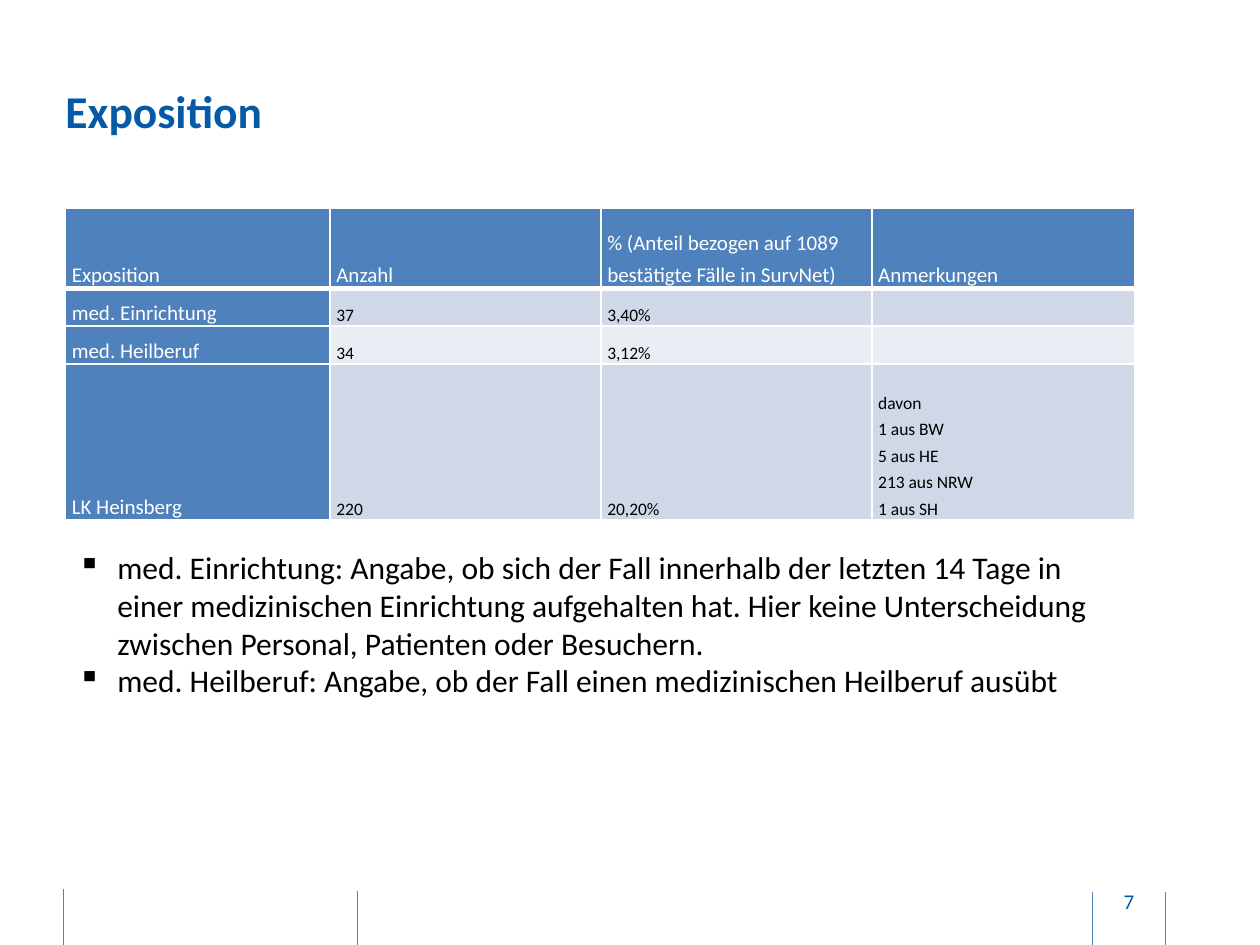
from dataclasses import dataclass

from lxml import etree
from pptx import Presentation
from pptx.dml.color import RGBColor
from pptx.enum.shapes import MSO_CONNECTOR
from pptx.enum.text import MSO_ANCHOR, PP_ALIGN
from pptx.oxml.ns import qn
from pptx.util import Pt

STRAIGHT = MSO_CONNECTOR.STRAIGHT
TOP, MIDDLE, BOTTOM = MSO_ANCHOR.TOP, MSO_ANCHOR.MIDDLE, MSO_ANCHOR.BOTTOM
LEFT, CENTER = PP_ALIGN.LEFT, PP_ALIGN.CENTER

TITLE_BLUE = RGBColor(0x04, 0x5A, 0xA6)
ACCENT_BLUE = RGBColor(0x4F, 0x81, 0xBD)
BAND_DARK = RGBColor(0xD0, 0xD8, 0xE8)
BAND_LIGHT = RGBColor(0xE9, 0xED, 0xF4)
WHITE = RGBColor(0xFF, 0xFF, 0xFF)
BLACK = RGBColor(0, 0, 0)

FONT = "Calibri"
MARGIN_LEFT = 37.44
CONTENT_WIDTH = 611.28
COLUMN_WIDTHS = (151.2, 154.8, 154.8, 150.48)
ROW_HEIGHTS = (45.9, 21.5, 21.5, 89.2)
TABLE_ROWS = (
    ("Exposition", "Anzahl", "% (Anteil bezogen auf 1089 bestätigte Fälle in SurvNet)", "Anmerkungen"),
    ("med. Einrichtung", "37", "3,40%", ""),
    ("med. Heilberuf", "34", "3,12%", ""),
    ("LK Heinsberg", "220", "20,20%", "davon\n1 aus BW\n5 aus HE\n213 aus NRW\n1 aus SH"),
)
NOTES = (
    "med. Einrichtung: Angabe, ob sich der Fall innerhalb der letzten 14 Tage in einer "
    "medizinischen Einrichtung aufgehalten hat. Hier keine Unterscheidung zwischen "
    "Personal, Patienten oder Besuchern.",
    "med. Heilberuf: Angabe, ob der Fall einen medizinischen Heilberuf ausübt",
)


@dataclass(frozen=True)
class Box:
    left: float
    top: float
    width: float
    height: float


@dataclass(frozen=True)
class FooterRule:
    x: float
    top: float
    bottom: float


FOOTER_RULES = (
    FooterRule(36, 508.3, 540.7),
    FooterRule(204.5, 509, 540.7),
    FooterRule(624.2, 509.8, 542.2),
    FooterRule(666, 509.8, 542.2),
)


def write_paragraph(paragraph, text: str, *, size: float, color: RGBColor, bold: bool = False,
                    align=LEFT, line_spacing: float = 1.0, bullet: str = "") -> None:
    """Fill a paragraph with formatted text."""
    paragraph.alignment = align
    paragraph.line_spacing = line_spacing
    if bullet:
        properties = paragraph._p.get_or_add_pPr()
        properties.set("marL", str(Pt(22.5)))
        properties.set("indent", str(Pt(-22.5)))
        etree.SubElement(properties, qn("a:buChar")).set("char", bullet)
    if text:
        paragraph.text = text
    for font in (paragraph.font, *(run.font for run in paragraph.runs)):
        font.name = FONT
        font.size = Pt(size)
        font.bold = bold
        font.color.rgb = color


def add_text(slide, box: Box, texts: tuple[str, ...], *, anchor=TOP,
             inset_x: float = 0, inset_y: float = 0, **text_format) -> None:
    """Add a wrapping text box with one paragraph per text."""
    shape = slide.shapes.add_textbox(Pt(box.left), Pt(box.top), Pt(box.width), Pt(box.height))
    frame = shape.text_frame
    frame.word_wrap = True
    frame.vertical_anchor = anchor
    frame.margin_left = frame.margin_right = Pt(inset_x)
    frame.margin_top = frame.margin_bottom = Pt(inset_y)
    for index, text in enumerate(texts):
        paragraph = frame.add_paragraph() if index else frame.paragraphs[0]
        write_paragraph(paragraph, text, **text_format)


def add_footer_rule(slide, rule: FooterRule) -> None:
    """Draw a thin vertical footer line."""
    connector = slide.shapes.add_connector(
        STRAIGHT, Pt(rule.x), Pt(rule.top), Pt(rule.x), Pt(rule.bottom))
    connector.line.color.rgb = ACCENT_BLUE
    connector.line.width = Pt(0.5)
    etree.SubElement(connector._element.spPr, qn("a:effectLst"))


def set_borders(cell, bottom_width: float) -> None:
    """Give a cell white borders with the stated bottom width."""
    properties = cell._tc.get_or_add_tcPr()
    widths = {"a:lnL": 1, "a:lnR": 1, "a:lnT": 1, "a:lnB": bottom_width}
    for index, (tag, width) in enumerate(widths.items()):
        border = etree.Element(qn(tag))
        border.set("w", str(Pt(width)))
        fill = etree.SubElement(border, qn("a:solidFill"))
        etree.SubElement(fill, qn("a:srgbClr")).set("val", str(WHITE))
        properties.insert(index, border)


def add_exposure_table(slide, box: Box) -> None:
    """Add the table with blue headings and banded values."""
    frame = slide.shapes.add_table(
        len(ROW_HEIGHTS), len(COLUMN_WIDTHS),
        Pt(box.left), Pt(box.top), Pt(box.width), Pt(box.height))
    table = frame.table
    table.first_col = True
    for column, width in zip(table.columns, COLUMN_WIDTHS):
        column.width = Pt(width)
    for row, height in zip(table.rows, ROW_HEIGHTS):
        row.height = Pt(height)
    for row_index, texts in enumerate(TABLE_ROWS):
        band = BAND_DARK if row_index % 2 else BAND_LIGHT
        for column_index, text in enumerate(texts):
            heading = row_index == 0 or column_index == 0
            cell = table.cell(row_index, column_index)
            cell.vertical_anchor = BOTTOM
            cell.margin_left = cell.margin_right = Pt(3.6)
            cell.margin_top = cell.margin_bottom = Pt(0)
            cell.fill.solid()
            cell.fill.fore_color.rgb = ACCENT_BLUE if heading else band
            set_borders(cell, 1 if row_index else 3)
            write_paragraph(cell.text_frame.paragraphs[0], text, line_spacing=1.25,
                            size=12 if heading else 10, color=WHITE if heading else BLACK)


def main() -> None:
    """Build and save the exposure slide."""
    presentation = Presentation()
    presentation.slide_width, presentation.slide_height = Pt(720), Pt(540)
    slide = presentation.slides.add_slide(presentation.slide_layouts[6])
    for rule in FOOTER_RULES:
        add_footer_rule(slide, rule)
    add_text(slide, Box(MARGIN_LEFT, 47.5, 628.6, 69.1), ("Exposition",),
             size=26, color=TITLE_BLUE, bold=True)
    add_exposure_table(slide, Box(MARGIN_LEFT, 119, CONTENT_WIDTH, sum(ROW_HEIGHTS)))
    add_text(slide, Box(MARGIN_LEFT, 309.6, CONTENT_WIDTH, 94.3), NOTES,
             inset_x=7.2, inset_y=3.6, size=18, color=BLACK, bullet="▪")
    add_text(slide, Box(625.7, 500.4, 38.9, 28.8), ("7",), anchor=MIDDLE,
             inset_y=3.6, size=12, color=TITLE_BLUE, align=CENTER)
    presentation.save("out.pptx")


if __name__ == "__main__":
    main()
